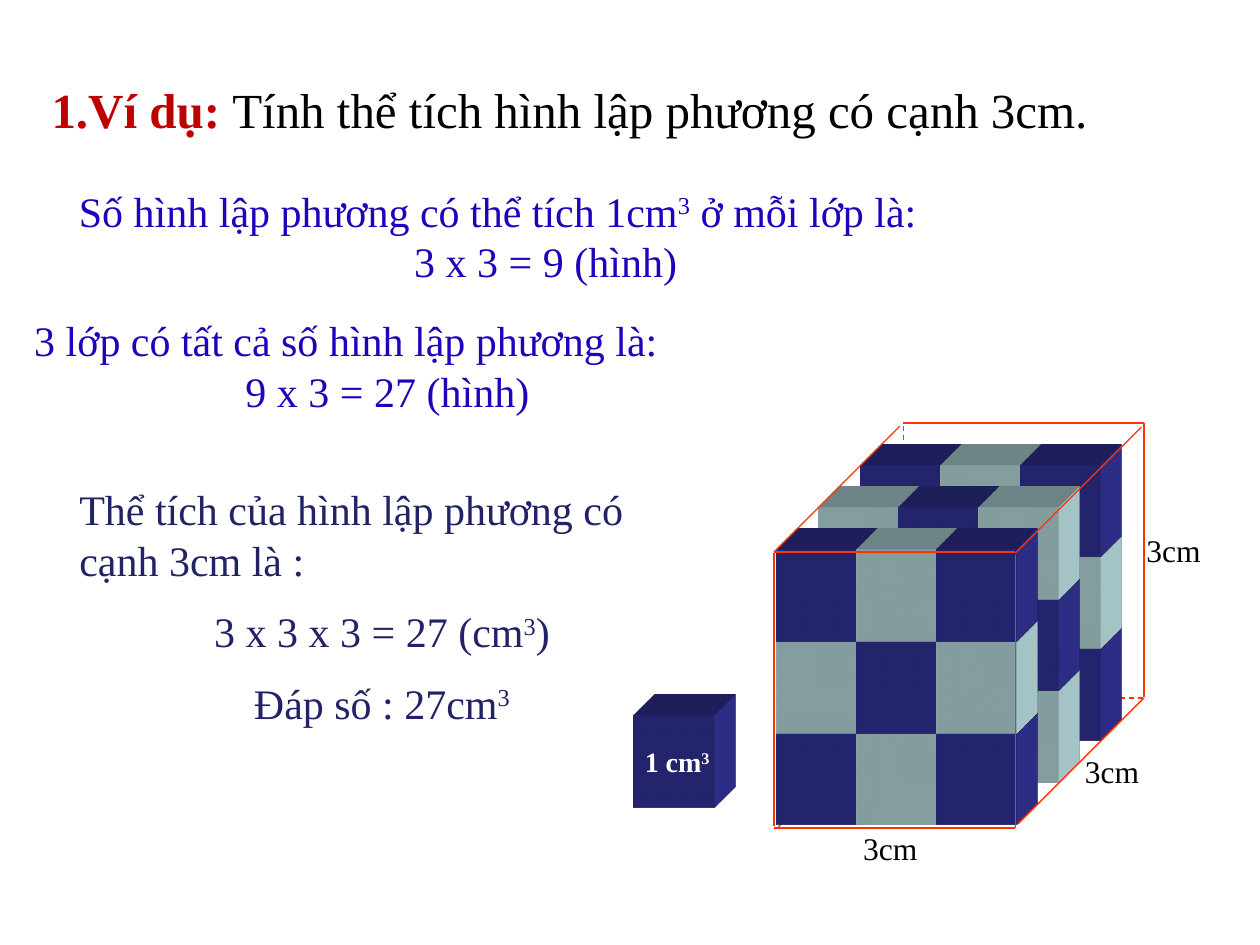
from itertools import product

from lxml.etree import SubElement
from pptx import Presentation
from pptx.dml.color import RGBColor
from pptx.enum.dml import MSO_LINE as Dash
from pptx.enum.shapes import MSO_CONNECTOR as Connector, MSO_SHAPE as Shape
from pptx.enum.text import MSO_ANCHOR as Anchor, PP_ALIGN as Align
from pptx.oxml import parse_xml
from pptx.oxml.ns import nsdecls, qn
from pptx.util import Cm, Pt

BLACK = RGBColor(0x00, 0x00, 0x00)
WHITE = RGBColor(0xFF, 0xFF, 0xFF)
RED = RGBColor(0xC0, 0x00, 0x00)
BLUE = RGBColor(0x1E, 0x03, 0xBD)
NAVY = RGBColor(0x22, 0x22, 0x67)
ORANGE = RGBColor(0xFF, 0x33, 0x00)
DARK = RGBColor(0x33, 0x33, 0x99)
LIGHT = RGBColor(0xBB, 0xE0, 0xE3)

FONT = "Times New Roman"
HEADING = {"name": FONT, "size": Pt(28), "bold": True, "color": RED}
QUESTION = {"name": FONT, "size": Pt(28), "bold": False, "color": BLACK}
STEP = {"name": FONT, "size": Pt(24), "color": BLUE}
ANSWER = {"name": FONT, "size": Pt(24), "color": NAVY}
LENGTH = {"name": FONT, "size": Pt(18), "color": BLACK}
UNIT = {"name": FONT, "size": Pt(16), "bold": True, "color": WHITE}
UNIT_GAP = {"name": "Roboto", "size": Pt(14), "bold": True, "color": WHITE}

LEFT = {"alignment": Align.LEFT}
CENTER = {"alignment": Align.CENTER}
SPACED = {"alignment": Align.CENTER, "space_before": Pt(12)}

# Text between ^ marks is superscript.
TEXT_BOXES = [
    ((0, 3.61, 20.07, 2.31), [
        (CENTER, 0, [("Số hình lập phương có thể tích 1cm^3^ ở mỗi lớp là:", STEP)]),
        (CENTER, 1.93, [("3 x 3 = 9 (hình)", STEP)])]),
    ((0.38, 6.22, 14.66, 2.31), [
        (LEFT, 0.06, [("3 lớp có tất cả số hình lập phương là:", STEP)]),
        (CENTER, 0.2, [("9 x 3 = 27 (hình)", STEP)])]),
    ((0.79, 1.47, 23.98, 1.45), [
        (LEFT, 0, [("1.Ví dụ: ", HEADING),
                   ("Tính thể tích hình lập phương có cạnh 3cm.", QUESTION)])]),
    ((1.35, 9.63, 12.7, 5.38), [
        (LEFT, 0, [("Thể tích của hình lập phương có cạnh 3cm là :", ANSWER)]),
        (SPACED, 0, [("3 x 3 x 3 = 27 (cm^3^)", ANSWER)]),
        (SPACED, 0, [("Đáp số : 27cm^3", ANSWER)])]),
] + [((left, top, 1.91, 1.02), [(LEFT, 0, [("3cm", LENGTH)])])
     for left, top in [(17.15, 16.59), (22.86, 10.59), (21.62, 15.04)]]

UNIT_LABEL = [(CENTER, 0, [(" ", UNIT_GAP), ("1 cm^3", UNIT)])]
UNIT_CUBE = (12.78, 14.43)
BIG_CUBE = (15.65, 11.08)
CUBE_SIZE = (1.62, 1.85)
ACROSS, DOWN, BACK = 1.61, 1.85, 0.85
COUNT = 3

HIDDEN_EDGES = [
    ((18.21, 8.59), (18.21, 14.07)), ((18.21, 14.15), (15.67, 16.69)),
    ((18.21, 14.07), (23.06, 14.07)),
]
VISIBLE_EDGES = [
    ((20.47, 11.18), (20.47, 16.69)), ((15.6, 11.15), (15.6, 16.66)),
    ((15.6, 16.69), (20.47, 16.69)), ((15.6, 11.13), (20.47, 11.13)),
    ((18.14, 8.59), (15.6, 11.13)), ((23.01, 8.61), (20.47, 11.15)),
    ((18.21, 8.53), (23.06, 8.53)), ((23.06, 8.53), (23.06, 14.05)),
    ((23.06, 14.07), (20.52, 16.61)),
]

SCENE = """<a:scene3d {names}><a:camera prst="legacyObliqueTopRight"/>
<a:lightRig rig="legacyFlat3" dir="b"/></a:scene3d>"""
SOLID = """<a:sp3d {names} extrusionH="430200" prstMaterial="legacyMatte">
<a:bevelT w="13500" h="13500" prst="angle"/><a:bevelB w="13500" h="13500" prst="angle"/>
<a:extrusionClr><a:srgbClr val="{color}"/></a:extrusionClr></a:sp3d>"""


def set_values(target, values):
    for name, value in values.items():
        setattr(target, name, value)


def write_text(frame, paragraphs):
    for index, (layout, indent, pieces) in enumerate(paragraphs):
        paragraph = frame.add_paragraph() if index else frame.paragraphs[0]
        set_values(paragraph, layout)
        if indent:
            paragraph._p.get_or_add_pPr().set("marL", str(Cm(indent)))
        for text, style in pieces:
            for part_index, part in enumerate(text.split("^")):
                run = paragraph.add_run()
                run.text = part
                set_values(run.font, {key: value for key, value in style.items() if key != "color"})
                run.font.color.rgb = style["color"]
                if part_index % 2:
                    run._r.get_or_add_rPr().set("baseline", "30000")


def add_cube(slide, place, color):
    cube = slide.shapes.add_shape(Shape.RECTANGLE, *map(Cm, place + CUBE_SIZE))
    cube.shadow.inherit = False
    cube.fill.solid()
    cube.fill.fore_color.rgb = color
    cube.line.fill.background()
    for template in (SCENE, SOLID):
        xml = template.format(names=nsdecls("a"), color=color)
        cube._element.spPr.append(parse_xml(xml))
    return cube


def add_big_cube(slide):
    left, top = BIG_CUBE
    for row, column, depth in product(reversed(range(COUNT)), range(COUNT), reversed(range(COUNT))):
        place = (left + column * ACROSS + depth * BACK, top + row * DOWN - depth * BACK)
        add_cube(slide, place, LIGHT if (row + column + depth) % 2 else DARK)


def add_edges(slide, edges, dash):
    for start, end in edges:
        edge = slide.shapes.add_connector(Connector.STRAIGHT, *map(Cm, start + end))
        edge.line.color.rgb = ORANGE
        set_values(edge.line, {"width": Pt(0.75), "dash_style": dash})
        SubElement(edge._element.spPr, qn("a:effectLst"))


def main():
    presentation = Presentation()
    set_values(presentation, {"slide_width": Cm(25.4), "slide_height": Cm(19.05)})
    slide = presentation.slides.add_slide(presentation.slide_layouts[6])

    add_edges(slide, HIDDEN_EDGES, Dash.DASH)
    add_big_cube(slide)
    unit_frame = add_cube(slide, UNIT_CUBE, DARK).text_frame
    set_values(unit_frame, {"word_wrap": False, "vertical_anchor": Anchor.MIDDLE})
    write_text(unit_frame, UNIT_LABEL)
    add_edges(slide, VISIBLE_EDGES, Dash.SOLID)

    for place, paragraphs in TEXT_BOXES:
        frame = slide.shapes.add_textbox(*map(Cm, place)).text_frame
        frame.word_wrap = True
        write_text(frame, paragraphs)

    presentation.save("out.pptx")


if __name__ == "__main__":
    main()
